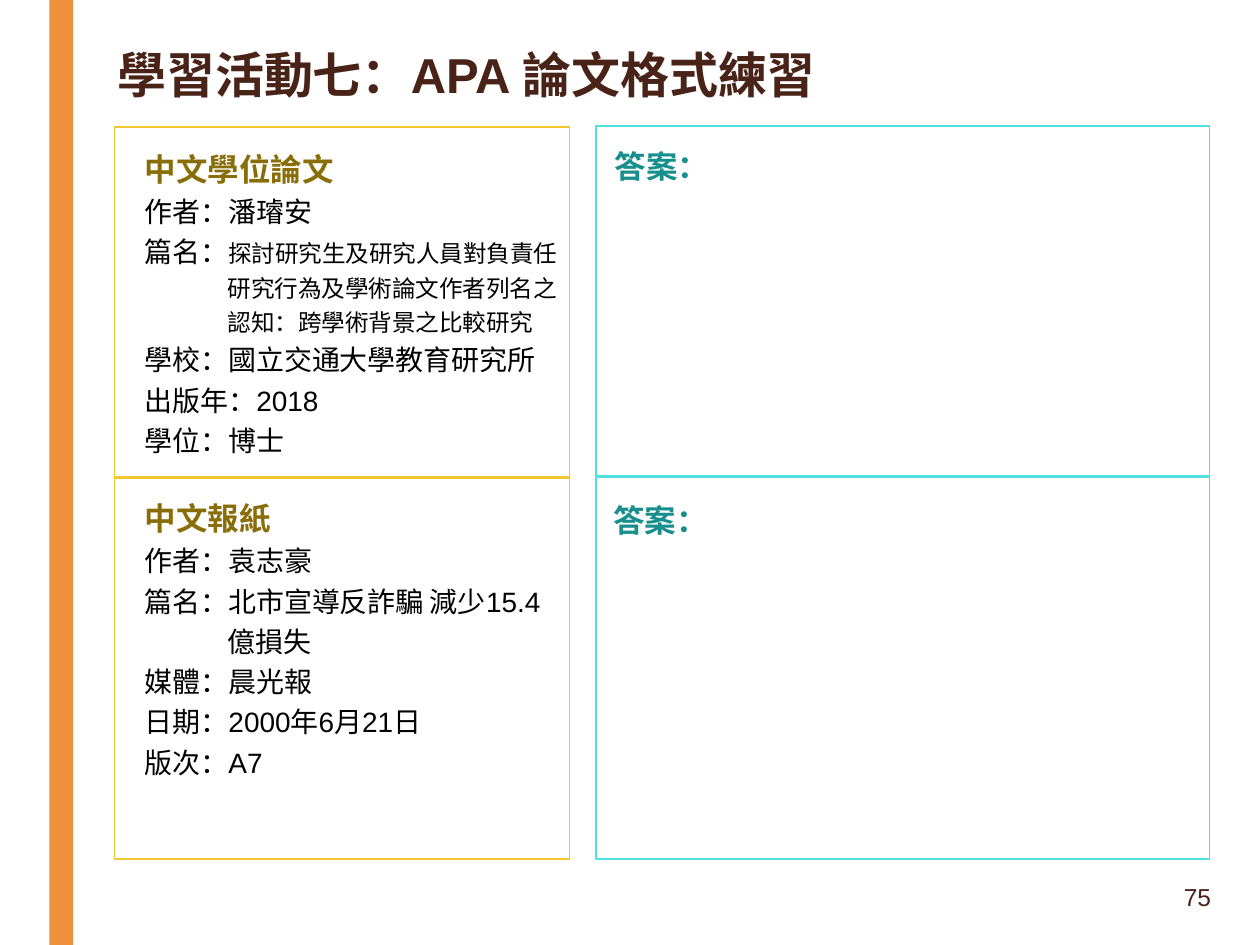
import pptx
import pptx.util
import pptx.dml.color
import pptx.enum.shapes
import pptx.enum.text
import pptx.oxml.ns
import lxml.etree

Pt = pptx.util.Pt
ANCHOR = pptx.enum.text.MSO_ANCHOR
ALIGN = pptx.enum.text.PP_ALIGN

COLORS = {
    "white": "FFFFFF", "orange": "EE913A", "brown": "4A2318", "black": "000000",
    "gold": "F3C82E", "olive": "896D08", "aqua": "4EE1E0", "teal": "188E8D",
}
LATIN, CHINESE = "Arial", "Noto Sans CJK SC"
TITLE = "學習活動七：APA 論文格式練習"
PAGE_NUMBER = "75"
ANSWER = "答案："
PANELS = [
    ((65.5, 72.7, 260, 418.3), 272.9, "gold"),
    ((340.6, 72, 350.6, 419), 272.2, "aqua"),
]
EXERCISES = [
    ("中文學位論文", (75.6, 77.8, 257, 189.4), [
        ("作者：", "潘璿安", 16),
        ("篇名：", "探討研究生及研究人員對負責任研究行為及學術論文作者列名之認知：跨學術背景之比較研究", 13.5),
        ("學校：", "國立交通大學教育研究所", 16),
        ("出版年：", "2018", 16),
        ("學位：", "博士", 16),
    ]),
    ("中文報紙", (75.6, 277.5, 243.4, 174.2), [
        ("作者：", "袁志豪", 16),
        ("篇名：", "北市宣導反詐騙 減少15.4億損失", 16),
        ("媒體：", "晨光報", 16),
        ("日期：", "2000年6月21日", 16),
        ("版次：", "A7", 16),
    ]),
]
ANSWER_BOXES = [(344.2, 80.6, 336.2, 29), (343.4, 283, 348.5, 29)]
HANGING = 47.5


def color(name):
    return pptx.dml.color.RGBColor.from_string(COLORS[name])


def add_rectangle(slide, box, fill, line=None):
    shape = slide.shapes.add_shape(
        pptx.enum.shapes.MSO_SHAPE.RECTANGLE, *map(Pt, box))
    shape.shadow.inherit = False
    shape.fill.solid()
    shape.fill.fore_color.rgb = color(fill)
    if line:
        shape.line.color.rgb = color(line)
        shape.line.width = Pt(1)
    else:
        shape.line.fill.background()


def add_divider(slide, left, right, y, line):
    connector = slide.shapes.add_connector(
        pptx.enum.shapes.MSO_CONNECTOR.STRAIGHT, Pt(left), Pt(y), Pt(right), Pt(y))
    connector.line.color.rgb = color(line)
    connector.line.width = Pt(1.5)
    lxml.etree.SubElement(connector._element.spPr, pptx.oxml.ns.qn("a:effectLst"))


def add_text_frame(slide, box):
    frame = slide.shapes.add_textbox(*map(Pt, box)).text_frame
    frame.word_wrap = True
    return frame


def style(paragraph, size, name, bold=False, font=LATIN):
    paragraph.font.size = Pt(size)
    paragraph.font.name = font
    paragraph.font.bold = bold
    paragraph.font.color.rgb = color(name)


def add_exercise(slide, heading, box, fields):
    frame = add_text_frame(slide, box)
    paragraph = frame.paragraphs[0]
    paragraph.text = heading
    paragraph.line_spacing = 1.2
    style(paragraph, 18, "olive", True, CHINESE)
    for label, value, size in fields:
        paragraph = frame.add_paragraph()
        paragraph.line_spacing = 1.2
        style(paragraph, 16, "black")
        properties = paragraph._p.get_or_add_pPr()
        properties.set("marL", str(Pt(HANGING)))
        properties.set("indent", str(-Pt(HANGING)))
        for text, run_size in ((label, 16), (value, size)):
            run = paragraph.add_run()
            run.text = text
            run.font.size = Pt(run_size)


def set_title(slide):
    title = slide.shapes.title
    title.left, title.top, title.width, title.height = map(Pt, (59.8, 25.9, 567.4, 54.7))
    frame = title.text_frame
    frame.text = TITLE
    frame.word_wrap = True
    frame.auto_size = pptx.enum.text.MSO_AUTO_SIZE.NONE
    frame.vertical_anchor = ANCHOR.TOP
    paragraph = frame.paragraphs[0]
    paragraph.alignment = ALIGN.LEFT
    paragraph.line_spacing = 0.89
    style(paragraph, 28, "brown", True)


def main():
    presentation = pptx.Presentation()
    presentation.slide_width, presentation.slide_height = Pt(720), Pt(540)
    slide = presentation.slides.add_slide(presentation.slide_layouts[5])
    slide.background.fill.solid()
    slide.background.fill.fore_color.rgb = color("white")
    set_title(slide)
    add_rectangle(slide, (28.2, 0, 13.6, 540), "orange")

    for box, divider, line in PANELS:
        add_rectangle(slide, box, "white", line)
        add_divider(slide, box[0], box[0] + box[2], divider, line)
    for heading, box, fields in EXERCISES:
        add_exercise(slide, heading, box, fields)
    for box in ANSWER_BOXES:
        paragraph = add_text_frame(slide, box).paragraphs[0]
        paragraph.text = ANSWER
        style(paragraph, 18, "teal", True)

    frame = add_text_frame(slide, (604.8, 496.8, 94.3, 31.7))
    frame.vertical_anchor = ANCHOR.MIDDLE
    paragraph = frame.paragraphs[0]
    paragraph.text = PAGE_NUMBER
    paragraph.alignment = ALIGN.RIGHT
    style(paragraph, 14, "brown")
    presentation.save("out.pptx")


if __name__ == "__main__":
    main()
